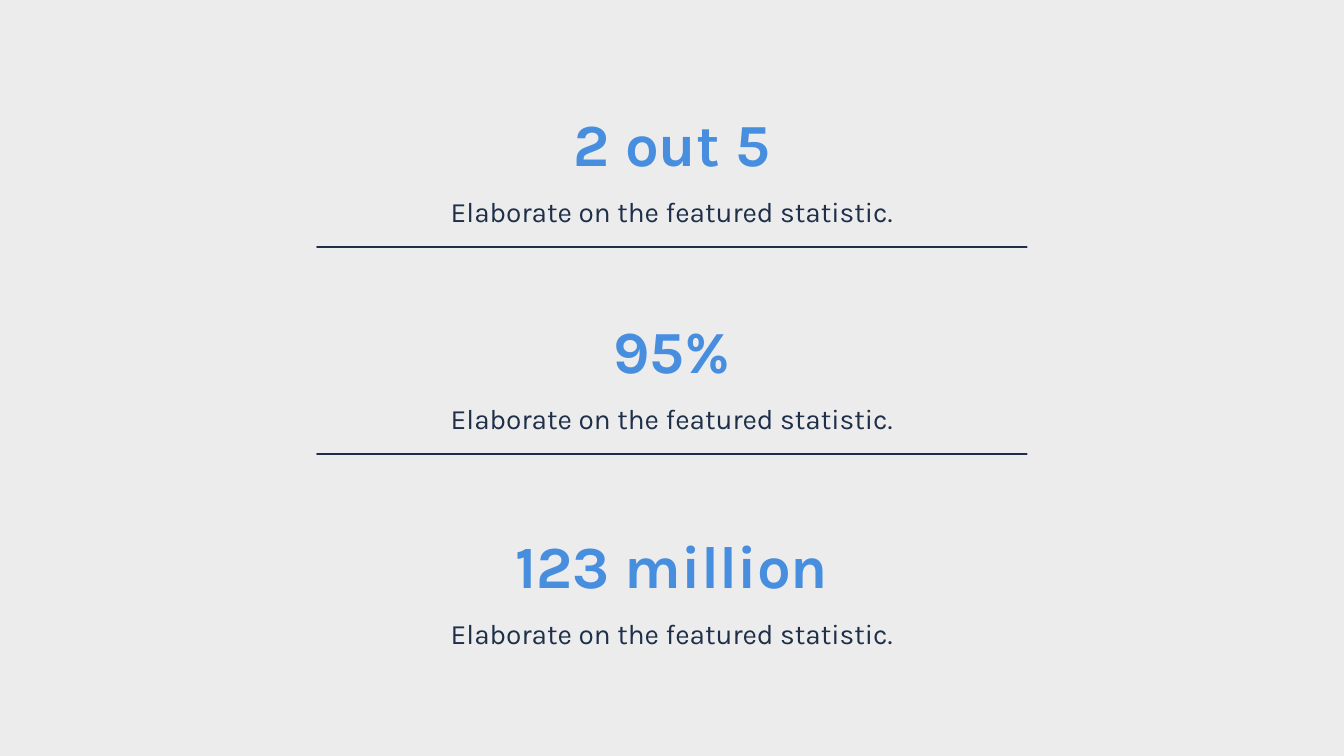
from pptx import Presentation
from pptx.dml.color import RGBColor
from pptx.enum.shapes import MSO_CONNECTOR
from pptx.enum.text import MSO_AUTO_SIZE, PP_ALIGN
from pptx.oxml.ns import qn
from pptx.util import Inches, Pt
from lxml.etree import SubElement

COLORS = {"background": "EDECED", "figure": "488EDF", "ink": "1E2F49"}
FONT = "Karla"
DETAIL = "Elaborate on the featured statistic."
STATS = [
    (0.69, "2 out 5", DETAIL),
    (2.23, "95%", DETAIL),
    (3.83, "123 million", DETAIL),
]
SLIDE_W = 10
SLIDE_H = SLIDE_W * 9 / 16
COLUMN_W, RULE_W = 5.3, 5.28
FIGURE = {"height": 0.54, "size": 32, "color": "figure", "bold": True, "spacing": 1.2}
CAPTION = {"height": 0.25, "size": 15, "color": "ink", "bold": False, "spacing": 1.3}
CAPTION_DROP, RULE_DROP = 0.68, 1.15


def rgb(name):
    return RGBColor.from_string(COLORS[name])


def add_text(slide, top, text, style):
    left = (SLIDE_W - COLUMN_W) / 2
    box = slide.shapes.add_textbox(
        Inches(left), Inches(top), Inches(COLUMN_W), Inches(style["height"]))
    tf = box.text_frame
    tf.margin_left = tf.margin_right = tf.margin_top = tf.margin_bottom = 0
    tf.word_wrap = True
    tf.auto_size = MSO_AUTO_SIZE.SHAPE_TO_FIT_TEXT
    tf.text = text
    p = tf.paragraphs[0]
    p.alignment = PP_ALIGN.CENTER
    p.line_spacing = style["spacing"]
    font = p.runs[0].font
    font.name = FONT
    font.size = Pt(style["size"])
    font.bold = style["bold"]
    font.color.rgb = rgb(style["color"])


def add_rule(slide, y):
    left = (SLIDE_W - RULE_W) / 2
    rule = slide.shapes.add_connector(
        MSO_CONNECTOR.STRAIGHT,
        Inches(left), Inches(y), Inches(left + RULE_W), Inches(y))
    rule.line.color.rgb = rgb("ink")
    rule.line.width = Pt(1)
    sp_pr = rule._element.spPr
    sp_pr.find(qn("a:ln")).set("cap", "rnd")
    SubElement(sp_pr, qn("a:effectLst"))


def main():
    prs = Presentation()
    prs.slide_width, prs.slide_height = Inches(SLIDE_W), Inches(SLIDE_H)
    slide = prs.slides.add_slide(prs.slide_layouts[6])
    slide.background.fill.solid()
    slide.background.fill.fore_color.rgb = rgb("background")

    for top, figure, caption in STATS:
        add_text(slide, top, figure, FIGURE)
        add_text(slide, top + CAPTION_DROP, caption, CAPTION)
    for top, _, _ in STATS[:-1]:
        add_rule(slide, top + RULE_DROP)

    prs.save("out.pptx")


if __name__ == "__main__":
    main()
